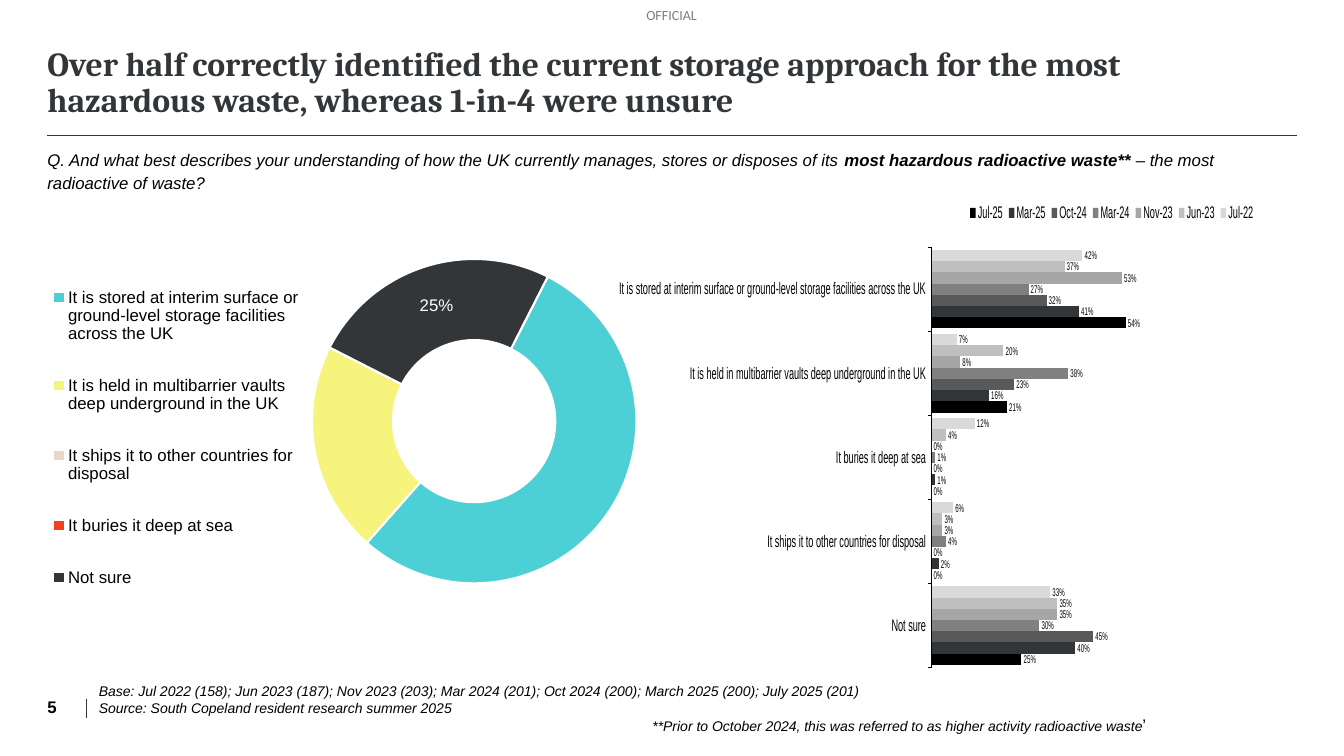
from dataclasses import dataclass, field
from typing import Any

from lxml.etree import SubElement
from pptx import Presentation
from pptx.chart.chart import Chart
from pptx.chart.data import CategoryChartData
from pptx.dml.color import RGBColor
from pptx.enum.chart import XL_CHART_TYPE as ChartKind
from pptx.enum.chart import XL_LABEL_POSITION as LabelPosition
from pptx.enum.chart import XL_LEGEND_POSITION as LegendPosition
from pptx.enum.chart import XL_TICK_MARK as TickMark
from pptx.enum.shapes import MSO_CONNECTOR as Connector
from pptx.enum.text import MSO_ANCHOR as Anchor
from pptx.oxml import parse_xml
from pptx.oxml.ns import nsdecls, qn
from pptx.util import Inches, Pt

PAGE_WIDTH, PAGE_HEIGHT = Inches(13.33), Inches(7.5)
BLACK = RGBColor(0x00, 0x00, 0x00)
WHITE = RGBColor(0xFF, 0xFF, 0xFF)
GREY = RGBColor(0x7F, 0x7F, 0x7F)
CHARCOAL = RGBColor(0x32, 0x36, 0x38)
TURQUOISE = RGBColor(0x4D, 0xCF, 0xD6)
YELLOW = RGBColor(0xF6, 0xF4, 0x7C)
SAND = RGBColor(0xE8, 0xD6, 0xC9)
RED = RGBColor(0xF5, 0x40, 0x1E)
WAVE_COLOURS = [RGBColor(level, level, level) for level in (0xD9, 0xBF, 0xA6, 0x80, 0x59)]
WAVE_COLOURS += [CHARCOAL, BLACK]

STORED = "It is stored at interim surface or ground-level storage facilities across the UK"
VAULTS = "It is held in multibarrier vaults deep underground in the UK"
SHIPS = "It ships it to other countries for disposal"
SEA = "It buries it deep at sea"
UNSURE = "Not sure"

LATEST = {
    STORED: (0.54, TURQUOISE),
    VAULTS: (0.21, YELLOW),
    SHIPS: (0, SAND),
    SEA: (0, RED),
    UNSURE: (0.25, CHARCOAL),
}
WAVES = {
    "Jul-22": (0.42, 0.07, 0.12, 0.06, 0.33),
    "Jun-23": (0.37, 0.20, 0.04, 0.03, 0.35),
    "Nov-23": (0.53, 0.08, 0, 0.03, 0.35),
    "Mar-24": (0.27, 0.38, 0.01, 0.04, 0.30),
    "Oct-24": (0.32, 0.23, 0, 0, 0.45),
    "Mar-25": (0.41, 0.16, 0.01, 0.02, 0.40),
    "Jul-25": (0.54, 0.21, 0, 0, 0.25),
}


@dataclass
class Frame:
    """Place and size in percent of the slide's width and height."""
    left: float
    top: float
    width: float
    height: float

    def lengths(self) -> tuple[int, int, int, int]:
        return (int(PAGE_WIDTH * self.left / 100), int(PAGE_HEIGHT * self.top / 100),
                int(PAGE_WIDTH * self.width / 100), int(PAGE_HEIGHT * self.height / 100))


@dataclass
class Span:
    text: str
    format: dict[str, Any] = field(default_factory=dict)


@dataclass
class TextBlock:
    frame: Frame
    paras: list[list[Span]]
    font: dict[str, Any]
    colour: RGBColor = BLACK
    anchor: Any = Anchor.TOP
    wrap: bool = True
    para_format: dict[str, Any] = field(default_factory=dict)


MARGIN, TEXT_WIDTH = 3.53, 90.17
ITALIC_SMALL = {"size": Pt(10), "italic": True}
BLOCKS = [
    TextBlock(Frame(48.09, 0.93, 3.98, 2.27), [[Span("OFFICIAL")]],
              {"name": "Calibri", "size": Pt(10)}, GREY, wrap=False),
    TextBlock(Frame(MARGIN, 90, 2.33, 4.8), [[Span("5")]],
              {"size": Pt(12), "bold": True}, anchor=Anchor.BOTTOM),
    TextBlock(Frame(MARGIN, 5.07, TEXT_WIDTH, 10.8),
              [[Span("Over half correctly identified the current storage approach for the most "
                     "hazardous waste, whereas 1-in-4 were unsure")]],
              {"name": "Cambria", "size": Pt(24), "bold": True}, CHARCOAL, Anchor.BOTTOM,
              para_format={"line_spacing": 0.9}),
    TextBlock(Frame(MARGIN, 19.47, TEXT_WIDTH, 4.8),
              [[Span("Q. And what best describes your understanding of how the UK currently "
                     "manages, stores or disposes of its "),
                Span("most hazardous radioactive waste** ", {"bold": True}),
                Span("– the most radioactive of waste?")]],
              {"size": Pt(12), "italic": True},
              para_format={"line_spacing": 1.13, "space_after": Pt(10)}),
    TextBlock(Frame(48.54, 94.27, 45.16, 3.87),
              [[Span("**Prior to October 2024, this was referred to as higher activity "
                     "radioactive waste"),
                Span("’", {"size": Pt(12), "italic": False})]],
              ITALIC_SMALL, wrap=False, para_format={"line_spacing": 1.12}),
    TextBlock(Frame(7.35, 90, 58.59, 4.8),
              [[Span("Base: Jul 2022 (158); Jun 2023 (187); Nov 2023 (203); Mar 2024 (201); "
                     "Oct 2024 (200); March 2025 (200); July 2025 (201)")],
               [Span("Source: South Copeland resident research summer 2025")]],
              ITALIC_SMALL, anchor=Anchor.BOTTOM),
]
RULES = [(Frame(MARGIN, 17.87, 92.94, 0), 0.75), (Frame(6.45, 92.4, 0, 2.53), 0.5)]


def apply(target: Any, values: dict[str, Any]) -> None:
    for name, value in values.items():
        setattr(target, name, value)


def set_font(font: Any, colour: RGBColor, values: dict[str, Any]) -> None:
    apply(font, {"name": "Arial"} | values)
    font.color.rgb = colour


def add_text(page: Any, block: TextBlock) -> None:
    box = page.shapes.add_textbox(*block.frame.lengths()).text_frame
    apply(box, {"margin_left": 0, "margin_top": 0, "margin_right": 0, "margin_bottom": 0,
                "word_wrap": block.wrap, "vertical_anchor": block.anchor})
    for index, spans in enumerate(block.paras):
        para = box.add_paragraph() if index else box.paragraphs[0]
        apply(para, block.para_format)
        for span in spans:
            run = para.add_run()
            run.text = span.text
            set_font(run.font, block.colour, block.font | span.format)


def add_rule(page: Any, frame: Frame, weight: float) -> None:
    left, top, width, height = frame.lengths()
    rule = page.shapes.add_connector(Connector.STRAIGHT, left, top, left + width, top + height)
    rule.line.color.rgb = CHARCOAL
    rule.line.width = Pt(weight)
    SubElement(rule._element.spPr, qn("a:effectLst"))


def manual_layout(shares: Frame, inner: bool) -> Any:
    """Chart layout element from shares of the chart's own size."""
    target = '<c:layoutTarget val="inner"/>' if inner else ""
    return parse_xml(
        f'<c:layout {nsdecls("c")}><c:manualLayout>{target}'
        '<c:xMode val="edge"/><c:yMode val="edge"/>'
        f'<c:x val="{shares.left}"/><c:y val="{shares.top}"/>'
        f'<c:w val="{shares.width}"/><c:h val="{shares.height}"/></c:manualLayout></c:layout>')


def add_chart(page: Any, kind: Any, frame: Frame, series: dict[str, Any],
              categories: list[str], plot_area: Frame, legend_at: Any) -> Chart:
    data = CategoryChartData(number_format="0%")
    data.categories = categories
    for name, values in series.items():
        data.add_series(name, values)
    chart = page.shapes.add_chart(kind, *frame.lengths(), data).chart
    apply(chart, {"has_title": False, "has_legend": True})
    set_font(chart.font, BLACK, {"size": Pt(10)})
    apply(chart.legend, {"position": legend_at, "include_in_layout": False})
    set_font(chart.legend.font, BLACK, {"size": Pt(12)})
    area = chart._chartSpace.chart.plotArea
    for layout in area.findall(qn("c:layout")):
        area.remove(layout)
    area.insert(0, manual_layout(plot_area, inner=True))
    chart.plots[0].has_data_labels = True
    return chart


def add_latest_doughnut(page: Any) -> None:
    shares = [share for share, _ in LATEST.values()]
    chart = add_chart(page, ChartKind.DOUGHNUT, Frame(MARGIN, 28.13, 45.69, 55.73),
                      {"Series 1": shares}, list(LATEST),
                      Frame(0.43, 0.11, 0.53, 0.77), LegendPosition.LEFT)
    legend = chart.legend._element
    for layout in legend.findall(qn("c:layout")):
        legend.remove(layout)
    legend.find(qn("c:legendPos")).addnext(manual_layout(Frame(0, 0.1, 0.42, 0.87), inner=False))
    plot = chart.plots[0]
    plot._element.find(qn("c:firstSliceAng")).set("val", "27")
    plot._element.find(qn("c:holeSize")).set("val", "50")
    labels = plot.data_labels
    apply(labels, {"show_value": True, "show_percentage": False,
                   "number_format": "0%;;", "number_format_is_linked": False})
    set_font(labels.font, BLACK, {"size": Pt(12)})
    for index, (_, colour) in enumerate(LATEST.values()):
        point = plot.series[0].points[index]
        point.format.fill.solid()
        point.format.fill.fore_color.rgb = colour
        point.format.line.color.rgb = WHITE
        point.format.line.width = Pt(1.5)
    set_font(plot.series[0].points[len(LATEST) - 1].data_label.font, WHITE, {"size": Pt(12)})


def add_wave_bars(page: Any) -> None:
    chart = add_chart(page, ChartKind.BAR_CLUSTERED, Frame(46.06, 25.47, 50.41, 64.53),
                      WAVES, [STORED, VAULTS, SEA, SHIPS, UNSURE],
                      Frame(0.012, 0.112, 0.973, 0.862), LegendPosition.TOP)
    axis = chart.category_axis
    apply(axis, {"reverse_order": True, "major_tick_mark": TickMark.OUTSIDE})
    set_font(axis.tick_labels.font, BLACK, {"size": Pt(12)})
    axis.format.line.color.rgb = BLACK
    axis.format.line.width = Pt(0.75)
    apply(chart.value_axis, {"visible": False, "has_major_gridlines": False,
                             "minimum_scale": 0, "maximum_scale": 1, "major_unit": 0.25})
    plot = chart.plots[0]
    apply(plot, {"gap_width": 50, "overlap": 0, "vary_by_categories": False})
    apply(plot.data_labels, {"show_value": True, "position": LabelPosition.OUTSIDE_END,
                             "number_format": "0%", "number_format_is_linked": False})
    set_font(plot.data_labels.font, BLACK, {"size": Pt(8)})
    for wave, colour in zip(plot.series, WAVE_COLOURS):
        wave.format.fill.solid()
        wave.format.fill.fore_color.rgb = colour


def main() -> None:
    deck = Presentation()
    apply(deck, {"slide_width": PAGE_WIDTH, "slide_height": PAGE_HEIGHT})
    page = deck.slides.add_slide(deck.slide_layouts[6])
    for frame, weight in RULES:
        add_rule(page, frame, weight)
    add_latest_doughnut(page)
    add_wave_bars(page)
    for block in BLOCKS:
        add_text(page, block)
    deck.save("out.pptx")


if __name__ == "__main__":
    main()
